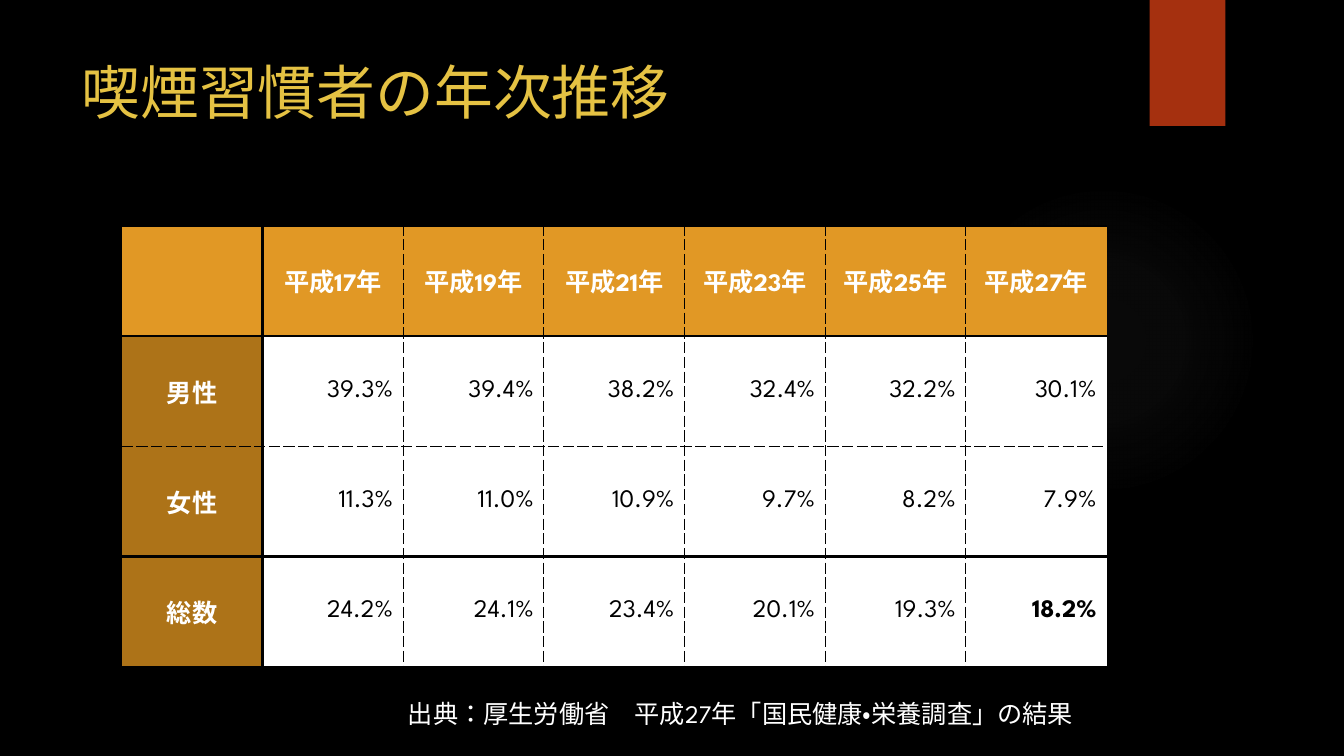
from dataclasses import dataclass

from lxml import etree
from pptx import Presentation
from pptx.dml.color import RGBColor
from pptx.enum.lang import MSO_LANGUAGE_ID
from pptx.enum.shapes import MSO_SHAPE
from pptx.enum.text import MSO_ANCHOR, MSO_AUTO_SIZE, PP_ALIGN
from pptx.oxml import parse_xml
from pptx.oxml.ns import nsdecls, qn
from pptx.util import Emu, Pt

EMU_PER_PX = 9525
TITLE_ONLY = 5
OVAL, RECTANGLE = MSO_SHAPE.OVAL, MSO_SHAPE.RECTANGLE
TOP, MIDDLE = MSO_ANCHOR.TOP, MSO_ANCHOR.MIDDLE
LEFT, CENTER, RIGHT = PP_ALIGN.LEFT, PP_ALIGN.CENTER, PP_ALIGN.RIGHT
NO_AUTOFIT = MSO_AUTO_SIZE.NONE
JAPANESE = MSO_LANGUAGE_ID.JAPANESE


@dataclass(frozen=True)
class Theme:
    font: str = "League Spartan"
    background: str = "000000"
    title: str = "E5C243"
    light: str = "FFFFFF"
    dark: str = "000000"
    ribbon: str = "A5300F"
    header: str = "E19825"
    row_label: str = "AD7318"
    glow: str = "848484"
    title_size: int = 42
    body_size: int = 18


# Each rule is (width in points, dash)
OUTER = (2, "solid")
STRONG = (2.25, "solid")
DASHED = (1, "sysDash")

YEARS = ["", "平成17年", "平成19年", "平成21年", "平成23年", "平成25年", "平成27年"]
SMOKING_RATES = [
    YEARS,
    ["男性", "39.3%", "39.4%", "38.2%", "32.4%", "32.2%", "30.1%"],
    ["女性", "11.3%", "11.0%", "10.9%", "9.7%", "8.2%", "7.9%"],
    ["総数", "24.2%", "24.1%", "23.4%", "20.1%", "19.3%", "18.2%"],
]
ROW_RULES = [OUTER, STRONG, DASHED, STRONG, OUTER]
COLUMN_RULES = [None, STRONG] + [DASHED] * (len(YEARS) - 2) + [None]


def px(*lengths):
    return [Emu(length * EMU_PER_PX) for length in lengths]


class SlideBuilder:
    def __init__(self, theme, slide):
        self.theme = theme
        self.slide = slide
        fill = slide.background.fill
        fill.solid()
        fill.fore_color.rgb = RGBColor.from_string(theme.background)

    def add_text(self, frame, text, color, size, align=LEFT, bold=False):
        paragraph = frame.paragraphs[0]
        paragraph.alignment = align
        run = paragraph.add_run()
        run.text = text
        font = run.font
        font.name = self.theme.font
        font.size = Pt(size)
        font.bold = bold
        font.language_id = JAPANESE
        font.color.rgb = RGBColor.from_string(color)

    def shape(self, kind, box, color):
        shape = self.slide.shapes.add_shape(kind, *px(*box))
        shape.shadow.inherit = False
        shape.line.fill.background()
        shape.fill.solid()
        shape.fill.fore_color.rgb = RGBColor.from_string(color)
        return shape

    def glow(self, box, stops):
        """Add a circle that fades outwards; stops are (position, opacity) in percent."""
        circle = self.shape(OVAL, box, self.theme.glow)
        stop_xml = "".join(
            f'<a:gs pos="{position * 1000}"><a:srgbClr val="{self.theme.glow}">'
            f'<a:alpha val="{opacity * 1000}"/></a:srgbClr></a:gs>'
            for position, opacity in stops
        )
        gradient = parse_xml(
            f'<a:gradFill {nsdecls("a")} rotWithShape="1"><a:gsLst>{stop_xml}</a:gsLst>'
            '<a:path path="circle"><a:fillToRect l="50000" t="50000" r="50000" b="50000"/>'
            "</a:path></a:gradFill>"
        )
        properties = circle._element.spPr
        properties.replace(properties.find(qn("a:solidFill")), gradient)

    def title(self, text, box):
        title = self.slide.shapes.title
        title.left, title.top, title.width, title.height = px(*box)
        frame = title.text_frame
        frame.word_wrap = True
        frame.auto_size = NO_AUTOFIT
        frame.vertical_anchor = TOP
        self.add_text(frame, text, self.theme.title, self.theme.title_size)

    def caption(self, text, box):
        frame = self.slide.shapes.add_textbox(*px(*box)).text_frame
        frame.word_wrap = True
        self.add_text(frame, text, self.theme.light, self.theme.body_size)

    def border(self, cell, side, rule):
        properties = cell._tc.get_or_add_tcPr()
        line = etree.SubElement(properties, qn(f"a:ln{side}"))
        if rule is None:
            etree.SubElement(line, qn("a:noFill"))
            return
        width, dash = rule
        line.set("w", str(int(Pt(width))))
        fill = etree.SubElement(line, qn("a:solidFill"))
        etree.SubElement(fill, qn("a:srgbClr"), val=self.theme.dark)
        etree.SubElement(line, qn("a:prstDash"), val=dash)

    def cell(self, cell, text, fill, color, align, bold, rules):
        for side, rule in zip("LRTB", rules):
            self.border(cell, side, rule)
        cell.fill.solid()
        cell.fill.fore_color.rgb = RGBColor.from_string(fill)
        cell.vertical_anchor = MIDDLE
        if text:
            self.add_text(cell.text_frame, text, color, self.theme.body_size, align, bold)

    def table(self, rows, left, top, column_width, row_height):
        theme = self.theme
        last_row, last_column = len(rows) - 1, len(rows[0]) - 1
        box = (left, top, column_width * len(rows[0]), row_height * len(rows))
        table = self.slide.shapes.add_table(len(rows), len(rows[0]), *px(*box)).table
        table.first_row = table.horz_banding = False
        for r, row in enumerate(rows):
            for c, text in enumerate(row):
                rules = (COLUMN_RULES[c], COLUMN_RULES[c + 1], ROW_RULES[r], ROW_RULES[r + 1])
                if r == 0:
                    style = (theme.header, theme.light, CENTER, True)
                elif c == 0:
                    style = (theme.row_label, theme.light, CENTER, True)
                else:
                    latest_total = (r, c) == (last_row, last_column)
                    style = (theme.light, theme.dark, RIGHT, latest_total)
                self.cell(table.cell(r, c), text, *style, rules)


def main():
    presentation = Presentation()
    presentation.slide_width, presentation.slide_height = px(1280, 720)
    slide = presentation.slides.add_slide(presentation.slide_layouts[TITLE_ONLY])
    theme = Theme()
    builder = SlideBuilder(theme, slide)
    builder.glow((903, 176, 296, 296), [(0, 7), (36, 6), (69, 0), (100, 0)])
    builder.shape(RECTANGLE, (1095, 0, 72, 120), theme.ribbon)
    builder.title("喫煙習慣者の年次推移", (68, 48, 988, 147))
    builder.table(SMOKING_RATES, left=116, top=215, column_width=134, row_height=105)
    builder.caption("出典：厚生労働省　平成27年「国民健康・栄養調査」の結果", (379, 660, 676, 38))
    presentation.save("out.pptx")


if __name__ == "__main__":
    main()
